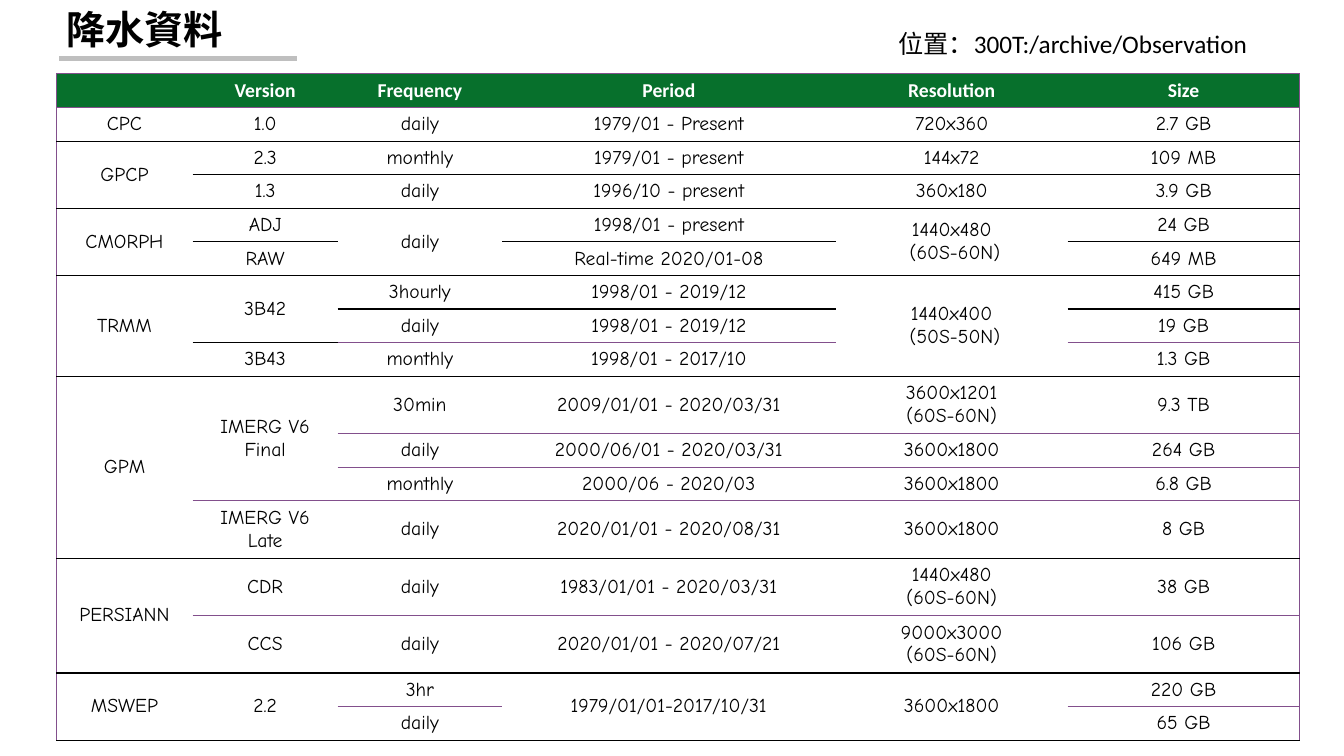
from copy import deepcopy
from dataclasses import dataclass

from lxml import etree
from pptx import Presentation
from pptx import util as u
from pptx.dml.color import RGBColor
from pptx.enum import shapes, text
from pptx.oxml import ns


@dataclass(frozen=True)
class Theme:
    """Colours, fonts and type sizes of the slide."""
    green: str = "07702C"
    purple: str = "824F8C"
    grey: str = "BFBFBF"
    black: str = "000000"
    white: str = "FFFFFF"
    latin: str = "Calibri"
    hand: str = "Comic Neue"
    cjk: str = "Noto Sans CJK TC"
    title: int = 28
    note: int = 18
    cell: int = 14


T = Theme()
NO_GRID = "{2D5ABB26-0587-4C30-8999-92F81FD0307C}"
COLUMNS = [1.35, 1.44, 1.63, 3.31, 2.3, 2.3]
TALL_HEIGHT = 0.57
TALL_ROWS = {9, 12, 13, 14}
PURPLE_RULES = {7, 9, 10, 11, 13, 15}
ROWS = [
    ["", "Version", "Frequency", "Period", "Resolution", "Size"],
    ["CPC", "1.0", "daily", "1979/01 - Present", "720x360", "2.7 GB"],
    ["GPCP", "2.3", "monthly", "1979/01 - present", "144x72", "109 MB"],
    [None, "1.3", "daily", "1996/10 - present", "360x180", "3.9 GB"],
    ["CMORPH", "ADJ", "daily", "1998/01 - present", "1440x480\n (60S-60N)", "24 GB"],
    [None, "RAW", None, "Real-time 2020/01-08", None, "649 MB"],
    ["TRMM", "3B42", "3hourly", "1998/01 - 2019/12", "1440x400\n (50S-50N)", "415 GB"],
    [None, None, "daily", "1998/01 - 2019/12", None, "19 GB"],
    [None, "3B43", "monthly", "1998/01 - 2017/10", None, "1.3 GB"],
    ["GPM", "IMERG V6\nFinal", "30min", "2009/01/01 - 2020/03/31", "3600x1201\n(60S-60N)", "9.3 TB"],
    [None, None, "daily", "2000/06/01 - 2020/03/31", "3600x1800", "264 GB"],
    [None, None, "monthly", "2000/06 - 2020/03", "3600x1800", "6.8 GB"],
    [None, "IMERG V6\nLate", "daily", "2020/01/01 - 2020/08/31", "3600x1800", "8 GB"],
    ["PERSIANN", "CDR", "daily", "1983/01/01 - 2020/03/31", "1440x480\n(60S-60N)", "38 GB"],
    [None, "CCS", "daily", "2020/01/01 - 2020/07/21", "9000x3000\n(60S-60N)", "106 GB"],
    ["MSWEP", "2.2", "3hr", "1979/01/01-2017/10/31", "3600x1800", "220 GB"],
    [None, None, "daily", None, None, "65 GB"],
]


def write(tf, content, size, font=T.latin, color=T.black, bold=False, align=text.PP_ALIGN.LEFT):
    """Write one formatted paragraph, with a line break at each newline."""
    p = tf.paragraphs[0]
    p.alignment = align
    if not content:
        etree.SubElement(p._p, ns.qn("a:endParaRPr"), sz=str(size * 100))
        return
    for i, line in enumerate(content.split("\n")):
        if i:
            p.add_line_break()
        r = p.add_run()
        r.text = line
        r.font.size, r.font.name, r.font.bold = u.Pt(size), font, bold
        r.font.color.rgb = RGBColor.from_string(color)
        etree.SubElement(r._r.rPr, ns.qn("a:ea"), typeface=T.cjk)
    for br in p._p.findall(ns.qn("a:br")):
        br.insert(0, deepcopy(r._r.rPr))


def place(sp, box):
    """Move and size a shape to a box given in inches."""
    sp.left, sp.top, sp.width, sp.height = map(u.Inches, box)


def add_heading(s, box):
    """Fill the title placeholder and underline it."""
    x, y, w, h = box
    place(s.shapes.title, box)
    tf = s.shapes.title.text_frame
    tf.auto_size = text.MSO_AUTO_SIZE.NONE
    tf.vertical_anchor = text.MSO_ANCHOR.MIDDLE
    write(tf, "降水資料", T.title, font=T.cjk, bold=True)
    line_y = u.Inches(y + h + 0.01)
    line = s.shapes.add_connector(shapes.MSO_CONNECTOR.STRAIGHT, u.Inches(x + 0.03), line_y,
                                  u.Inches(x + w + 0.28), line_y)
    line.line.color.rgb = RGBColor.from_string(T.grey)
    line.line.width = u.Pt(3)
    etree.SubElement(line._element.spPr, ns.qn("a:effectLst"))


def add_location(s, box):
    """Add the archive location note."""
    tf = s.shapes.add_textbox(*map(u.Inches, box)).text_frame
    tf.word_wrap = True
    tf.auto_size = text.MSO_AUTO_SIZE.SHAPE_TO_FIT_TEXT
    write(tf, "位置：300T:/archive/Observation", T.note)


def set_borders(cell, **borders):
    """Set cell borders, keyed L, R, T and B, from (colour, points) pairs."""
    tc_pr = cell._tc.get_or_add_tcPr()
    for i, side in enumerate(k for k in "LRTB" if k in borders):
        color, points = borders[side]
        ln = etree.Element(ns.qn(f"a:ln{side}"), w=str(u.Pt(points)))
        fill = etree.SubElement(ln, ns.qn("a:solidFill"))
        etree.SubElement(fill, ns.qn("a:srgbClr"), val=color)
        tc_pr.insert(i, ln)


def rule_below(row, col):
    """Return the border under a cell: black by default, purple inside some groups."""
    thin = row in PURPLE_RULES or row in (-1, 0)
    if thin and (row, col) != (7, 1):
        return T.purple, 0.5
    return T.black, 1


def span_end(row, col):
    """Return the last row covered by the entry that starts at a cell."""
    while row + 1 < len(ROWS) and ROWS[row + 1][col] is None:
        row += 1
    return row


def format_cell(cell, row, col):
    """Fill, border and write one table cell."""
    head = row == 0
    content = ROWS[row][col]
    last = span_end(row, col)
    cell.vertical_anchor = text.MSO_ANCHOR.MIDDLE
    if head:
        cell.fill.solid()
        cell.fill.fore_color.rgb = RGBColor.from_string(T.green)
    else:
        cell.fill.background()
    borders = {}
    if content is not None:
        borders["T"] = rule_below(row - 1, col)
    if content is not None or last == row:
        borders["B"] = rule_below(last, col)
    if col == 0:
        borders["L"] = (T.purple, 0.5)
    if col == len(COLUMNS) - 1:
        borders["R"] = (T.purple, 0.5)
    set_borders(cell, **borders)
    write(cell.text_frame, content, T.cell, font=T.latin if head else T.hand,
          color=T.white if head else T.black, bold=head, align=text.PP_ALIGN.CENTER)


def add_datasets(s, box):
    """Add the precipitation dataset table."""
    tbl = s.shapes.add_table(len(ROWS), len(COLUMNS), *map(u.Inches, box)).table
    tbl.horz_banding = False
    tbl._tbl.tblPr.find(ns.qn("a:tableStyleId")).text = NO_GRID
    for column, width in zip(tbl.columns, COLUMNS):
        column.width = u.Inches(width)
    short = (box[3] - TALL_HEIGHT * len(TALL_ROWS)) / (len(ROWS) - len(TALL_ROWS))
    for i, row in enumerate(tbl.rows):
        row.height = u.Inches(TALL_HEIGHT if i in TALL_ROWS else short)
    for i, entries in enumerate(ROWS):
        for j, content in enumerate(entries):
            last = span_end(i, j)
            if content is not None and last > i:
                tbl.cell(i, j).merge(tbl.cell(last, j))
            format_cell(tbl.cell(i, j), i, j)


def main():
    """Build and save the slide."""
    prs = Presentation()
    prs.slide_width, prs.slide_height = u.Inches(13.33), u.Inches(7.5)
    s = prs.slides.add_slide(prs.slide_layouts[5])
    add_heading(s, (0.56, 0, 2.11, 0.57))
    add_datasets(s, (0.56, 0.73, 12.33, 6.61))
    add_location(s, (8.81, 0.23, 4.28, 0.4))
    prs.save("out.pptx")


if __name__ == "__main__":
    main()
